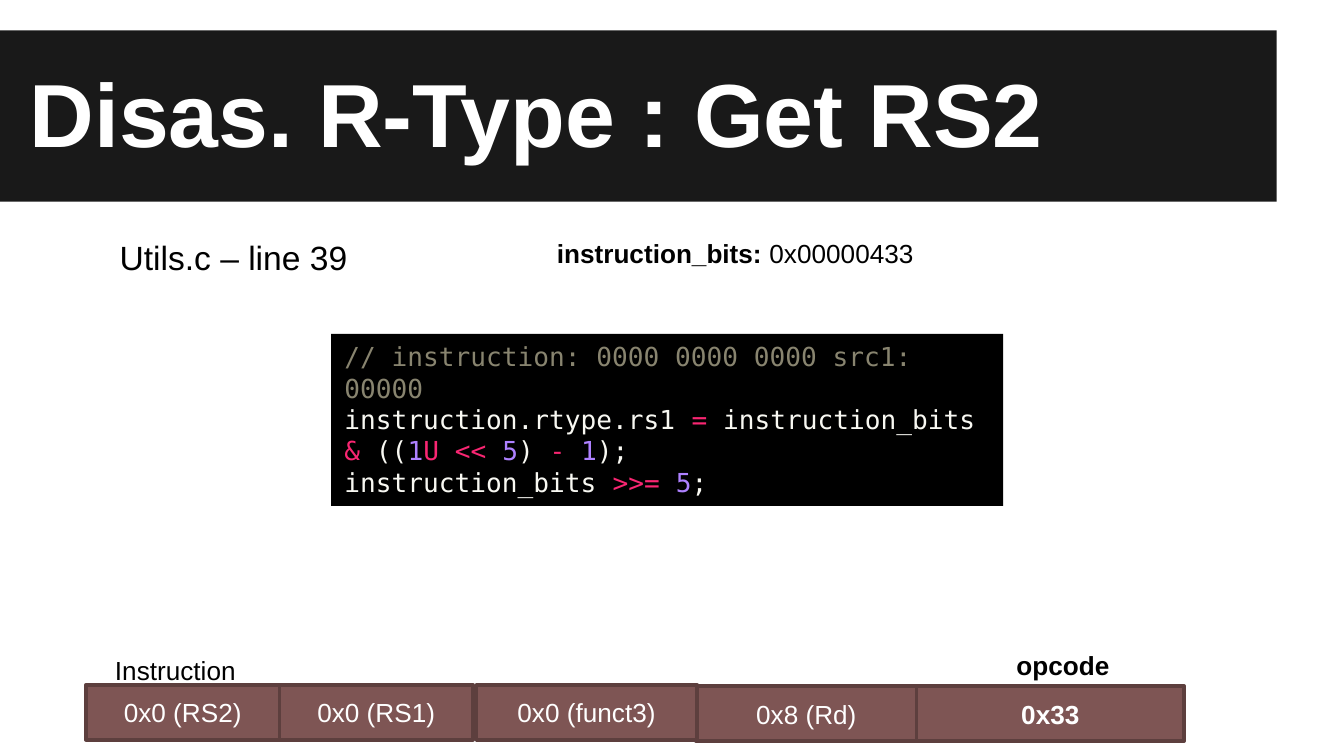
from pptx import Presentation
from pptx.dml.color import RGBColor
from pptx.enum.shapes import MSO_SHAPE
from pptx.enum.text import MSO_ANCHOR, MSO_AUTO_SIZE, PP_ALIGN
from pptx.util import Emu, Pt

RECTANGLE = MSO_SHAPE.RECTANGLE
LEFT, CENTER = PP_ALIGN.LEFT, PP_ALIGN.CENTER
TOP, MIDDLE, BOTTOM = MSO_ANCHOR.TOP, MSO_ANCHOR.MIDDLE, MSO_ANCHOR.BOTTOM
GROW, FIXED = MSO_AUTO_SIZE.SHAPE_TO_FIT_TEXT, MSO_AUTO_SIZE.NONE
PX = 4572  # 200 px to the inch

COLORS = {
    "banner": "191919", "white": "FFFFFF", "black": "000000",
    "field": "7E5554", "border": "5D3F3E",
    "comment": "88846F", "plain": "F8F8F2", "operator": "F92672", "number": "AE81FF",
}


def add_rectangle(box, fill, border=None):
    shape = slide.shapes.add_shape(RECTANGLE, *[Emu(n * PX) for n in box])
    shape.shadow.inherit = False
    shape.fill.solid()
    shape.fill.fore_color.rgb = RGBColor.from_string(COLORS[fill])
    if border:
        shape.line.color.rgb = RGBColor.from_string(COLORS[border])
        shape.line.width = Pt(2)
    else:
        shape.line.fill.background()
    return shape


def write(shape, lines, size=14, font="Arial", align=LEFT, anchor=TOP, wrap=True, fit=FIXED):
    """Each line is a list of (text, colour, bold) runs."""
    frame = shape.text_frame
    frame.word_wrap = wrap
    frame.auto_size = fit
    frame.vertical_anchor = anchor
    for index, runs in enumerate(lines):
        paragraph = frame.add_paragraph() if index else frame.paragraphs[0]
        paragraph.alignment = align
        for text, color, bold in runs:
            run = paragraph.add_run()
            run.text = text
            run.font.name = font
            run.font.size = Pt(size)
            run.font.bold = bold
            run.font.color.rgb = RGBColor.from_string(COLORS[color])
    return frame


presentation = Presentation()
presentation.slide_width = Emu(2000 * PX)
presentation.slide_height = Emu(1125 * PX)
slide = presentation.slides.add_slide(presentation.slide_layouts[6])

# Title banner
add_rectangle((0, 45, 1900, 255), "banner")
title = slide.shapes.add_textbox(*[Emu(n * PX) for n in (-44, 104, 2086, 162)])
frame = write(title, [[("Disas. R-Type : Get RS2", "white", True)]], size=48, anchor=BOTTOM)
frame.margin_left = Emu(88 * PX)
frame.margin_top = frame.margin_right = frame.margin_bottom = Emu(20 * PX)

# Source location
location = slide.shapes.add_textbox(*[Emu(n * PX) for n in (150, 334, 1000, 84)])
frame = write(location, [[("Utils.c – line 39", "black", False)]], size=18, fit=GROW)
frame.margin_left = Emu(28 * PX)
frame.paragraphs[0].line_spacing = 1.15

# Labels
labels = [
    ((809, 344, 584, 68), LEFT,
     [("instruction_bits: ", "black", True), ("0x00000433", "black", False)]),
    ((151, 964, 220, 68), CENTER, [("Instruction", "black", False)]),
    ((1492, 957, 180, 68), CENTER, [("opcode", "black", True)]),
]
for box, align, runs in labels:
    label = slide.shapes.add_textbox(*[Emu(n * PX) for n in box])
    write(label, [runs], align=align, wrap=False, fit=GROW)

# Code listing
code_lines = [
    [("// instruction: 0000 0000 0000 src1: 00000", "comment")],
    [("instruction.rtype.rs1 ", "plain"), ("= ", "operator"),
     ("instruction_bits ", "plain"), ("&", "operator"), (" ((", "plain"),
     ("1", "number"), ("U << ", "operator"), ("5", "number"), (") ", "plain"),
     ("- ", "operator"), ("1", "number"), (");", "plain")],
    [("instruction_bits ", "plain"), (">>= ", "operator"),
     ("5", "number"), (";", "plain")],
]
code = add_rectangle((493, 497, 1000, 256), "black")
write(code, [[(text, color, False) for text, color in line] for line in code_lines],
      font="DejaVu Sans Mono", fit=GROW)

# Instruction fields, right to left so that left ones overlap their neighbours
fields = [
    ("0x33", 1364, 1021, 398, True),
    ("0x8 (Rd)", 1036, 1021, 328, False),
    ("0x0 (funct3)", 709, 1019, 328, False),
    ("0x0 (RS1)", 416, 1019, 288, False),
    ("0x0 (RS2)", 128, 1019, 288, False),
]
for text, left, top, width, bold in fields:
    field = add_rectangle((left, top, width, 82), "field", "border")
    write(field, [[(text, "white", bold)]], align=CENTER, anchor=MIDDLE)

presentation.save("out.pptx")
